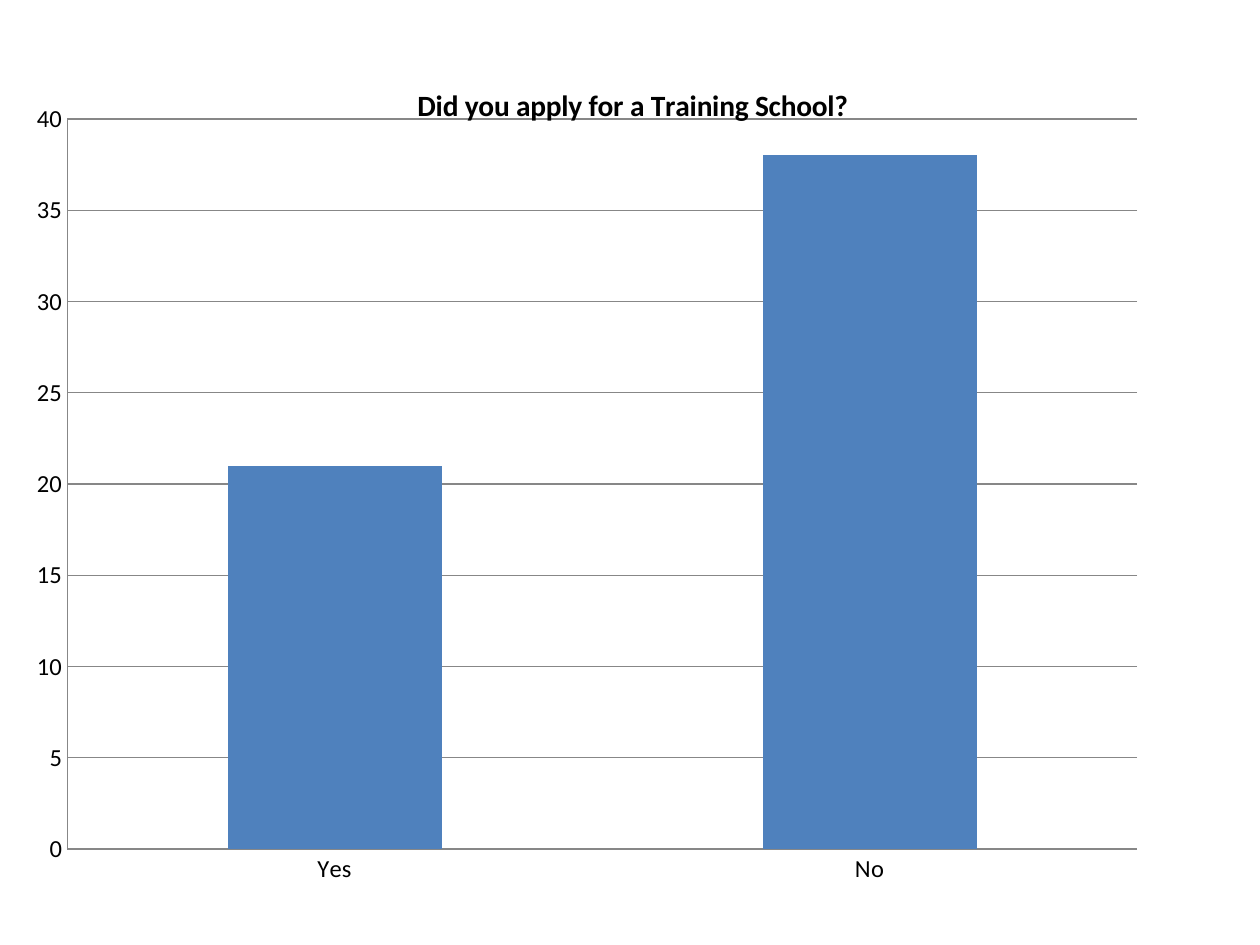
from dataclasses import dataclass

from lxml.etree import SubElement as Sub
from pptx import Presentation
from pptx.chart.data import CategoryChartData as Data
from pptx.dml.color import RGBColor as Rgb
from pptx.enum.chart import XL_CHART_TYPE as Kind, XL_TICK_MARK as Tick
from pptx.oxml.ns import qn
from pptx.util import Cm, Pt


@dataclass(frozen=True)
class Theme:
    """Hold the font, type sizes and colours."""
    font: str = "Calibri"
    head: float = 16.8
    body: float = 14
    ink: Rgb = Rgb(0, 0, 0)
    bar: Rgb = Rgb(0x4F, 0x81, 0xBD)
    rule: Rgb = Rgb(0x87, 0x87, 0x87)


THEME = Theme()


def style(font, size, bold=False):
    """Set the face, size, weight and colour of a font."""
    font.name, font.size, font.bold = THEME.font, Pt(size), bold
    font.color.rgb = THEME.ink


def rule(line):
    """Draw a line as a thin grey rule."""
    line.color.rgb = THEME.rule
    line.width = Pt(0.75)


def place(node, rank, **parts):
    """Give a chart part a manual layout, as child number rank."""
    for old in node.findall(qn("c:layout")):
        node.remove(old)
    layout = Sub(node, qn("c:layout"))
    node.insert(rank, layout)
    man = Sub(layout, qn("c:manualLayout"))
    if "w" in parts:
        Sub(man, qn("c:layoutTarget")).set("val", "inner")
    for key in ("x", "y"):
        Sub(man, qn(f"c:{key}Mode")).set("val", "edge")
    for key, val in parts.items():
        Sub(man, qn(f"c:{key}")).set("val", str(val))


def add_title(chart, text):
    """Put a bold title just above the plot."""
    title = chart.chart_title
    run = title.text_frame.paragraphs[0].add_run()
    run.text = text
    style(run.font, THEME.head, True)
    place(title._element, 1, x=0.32, y=0.04)


def add_axes(chart):
    """Format both axes and the grid."""
    for axis in (chart.category_axis, chart.value_axis):
        axis.major_tick_mark = axis.minor_tick_mark = Tick.NONE
        rule(axis.format.line)
        style(axis.tick_labels.font, THEME.body)
    axis = chart.value_axis
    axis.minimum_scale, axis.maximum_scale, axis.major_unit = 0, 40, 5
    axis.has_major_gridlines = True
    rule(axis.major_gridlines.format.line)


def add_poll(slide, box, text, votes):
    """Chart the votes as columns within the box."""
    data = Data()
    data.categories = list(votes)
    data.add_series("Series 1", list(votes.values()))
    chart = slide.shapes.add_chart(Kind.COLUMN_CLUSTERED, *box, data).chart
    chart.has_legend = False
    style(chart.font, THEME.body)
    add_title(chart, text)
    add_axes(chart)
    plot = chart.plots[0]
    plot.gap_width, plot.vary_by_categories = 150, False
    fill = plot.series[0].format.fill
    fill.solid()
    fill.fore_color.rgb = THEME.bar
    area = chart._chartSpace.chart.plotArea
    place(area, 0, x=0.035, y=0.085, w=0.884, h=0.846)


def main():
    """Build and save the slide."""
    deck = Presentation()
    deck.slide_width, deck.slide_height = Cm(25.4), Cm(19.05)
    slide = deck.slides.add_slide(deck.slide_layouts[6])
    box = Cm(0.5), Cm(0.92), Cm(24.4), Cm(17.4)
    add_poll(slide, box, "Did you apply for a Training School?",
             {"Yes": 21, "No": 38})
    deck.save("out.pptx")


if __name__ == "__main__":
    main()
